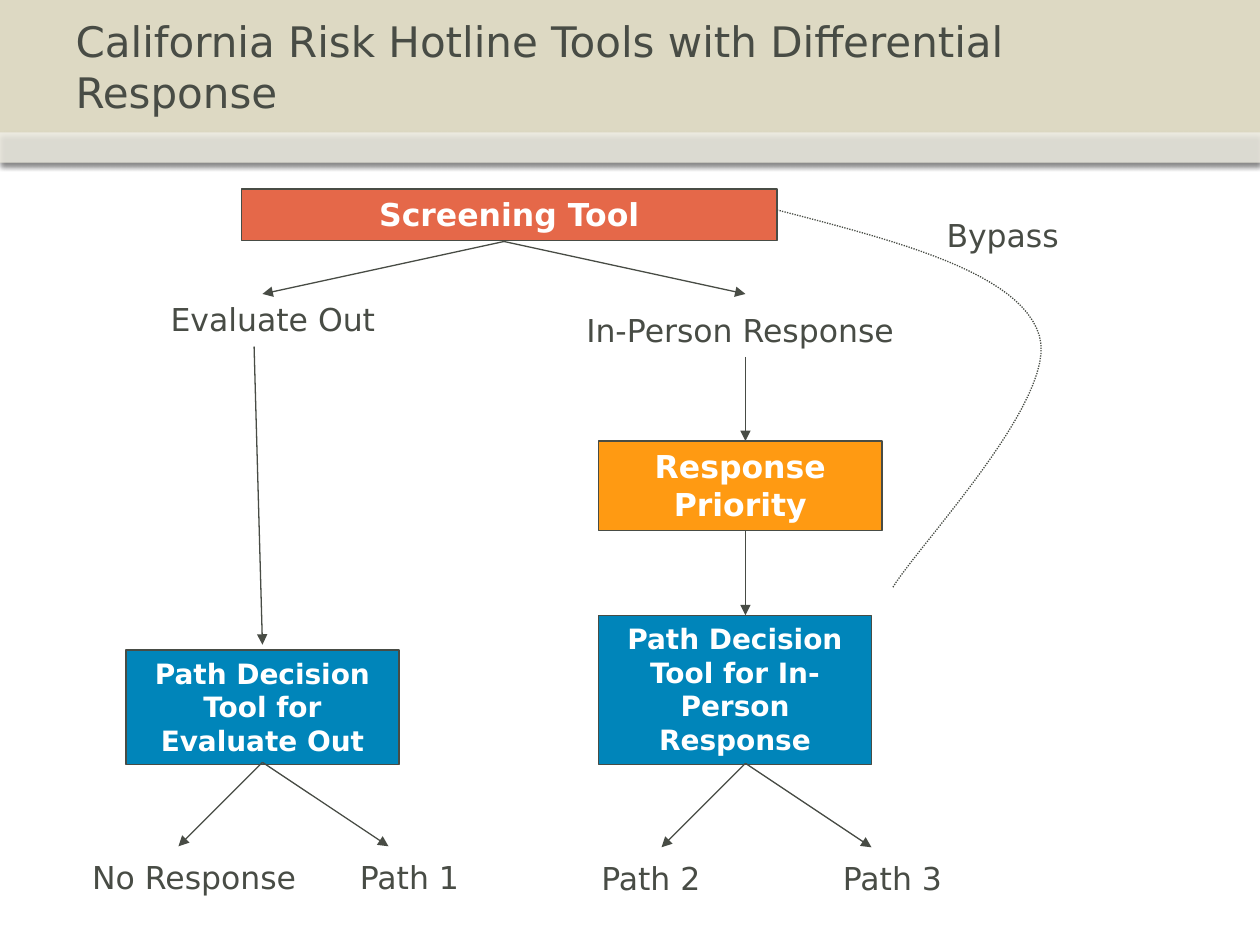
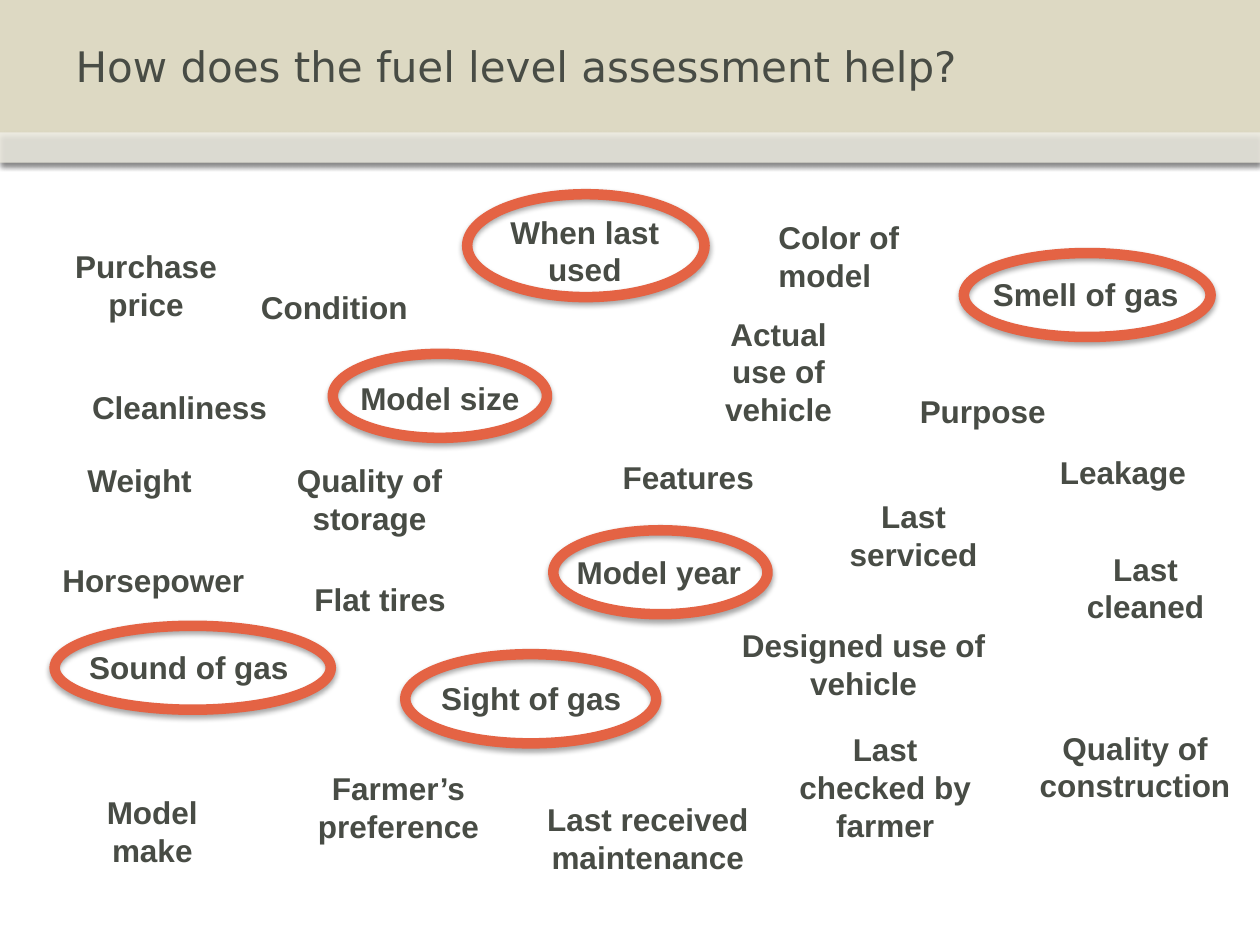
from typing import NamedTuple

from lxml import etree
from pptx import Presentation
from pptx import util as u
from pptx.dml.color import RGBColor
from pptx.enum import dml, shapes, text
from pptx.oxml.ns import qn

# The slide is a grid of 120 columns by 90 rows of square cells.
COLS, ROWS = 120, 90
CELL = u.Inches(10) / COLS

INK, WHITE, SAND = "484C45", "FFFFFF", "DDD9C3"
CORAL, ORANGE, BLUE, RING = "E56849", "FF9A12", "0085BA", "E46344"
SANS, ARIAL = "DejaVu Sans", "Arial"
CENTER, LEFT = text.PP_ALIGN.CENTER, text.PP_ALIGN.LEFT
Point = tuple[float, float]


class Area(NamedTuple):
    """Left, top, width and height in grid cells."""
    x: float
    y: float
    w: float
    h: float = 8.3


class Step(NamedTuple):
    label: str
    area: Area
    fill: str | None = None
    size: int = 18


class Factor(NamedTuple):
    label: str
    area: Area
    align: text.PP_ALIGN = CENTER


STEPS = [
    Step("Bypass", Area(87, 20, 17, 4.8)),
    Step("Screening Tool", Area(23, 18, 51, 4.9), CORAL),
    Step("Evaluate Out", Area(11, 28, 30, 4.8)),
    Step("In-Person Response", Area(53, 29, 35, 4.8)),
    Step("Response Priority", Area(57, 42, 27, 8.5), ORANGE),
    Step("Path Decision Tool for In-Person Response", Area(57, 58.6, 26, 14.2), BLUE, 16),
    Step("Path Decision Tool for Evaluate Out", Area(12, 61.9, 26, 10.9), BLUE, 16),
    Step("No Response", Area(7, 81.1, 23, 4.8)),
    Step("Path 1", Area(30, 81.1, 18, 4.8)),
    Step("Path 2", Area(53, 81.2, 18, 4.8)),
    Step("Path 3", Area(76, 81.2, 18, 4.8)),
]
ARROWS: list[tuple[Point, list[Point]]] = [
    ((48, 23), [(25, 28), (71, 28)]),
    ((24.2, 33), [(25, 61.4)]),
    ((71, 34), [(71, 42)]),
    ((71, 50.6), [(71, 58.6)]),
    ((25, 72.6), [(17, 80.6), (37, 80.6)]),
    ((71, 72.7), [(63, 80.7), (83, 80.7)]),
]
BYPASS_CURVES: list[list[Point]] = [
    [(74, 20), (85.6, 23), (97.2, 26), (99, 32)],
    [(99, 32), (100.8, 38), (87.4, 52), (85, 56)],
]
FACTORS = [
    Factor("Condition", Area(24, 25.1, 17.6), LEFT),
    Factor("Features", Area(56.3, 41.3, 18.5)),
    Factor("Quality of storage", Area(23, 43.4, 24.4)),
    Factor("Horsepower", Area(4, 51.1, 21.2)),
    Factor("Designed use of vehicle", Area(69.4, 59.9, 25.7, 6.6)),
    Factor("When last used", Area(46, 17.8, 19.4, 12.1)),
    Factor("Model size", Area(25.6, 33.7, 32.6)),
    Factor("Model year", Area(46.3, 50.3, 32.9)),
    Factor("Sound of gas", Area(0, 59.4, 36)),
    Factor("Smell of gas", Area(86.8, 23.8, 33.2)),
    Factor("Sight of gas", Area(32.8, 62.3, 35.6)),
    Factor("Color of model", Area(73.3, 20.2, 21.7), LEFT),
    Factor("Last serviced", Area(77.2, 46.8, 19.6)),
    Factor("Leakage", Area(99.2, 40.8, 15.5)),
    Factor("Farmer’s preference", Area(27.7, 67.8, 20.5, 18.1)),
    Factor("Model make", Area(5.9, 75, 17.2)),
    Factor("Weight", Area(4.7, 41.6, 17.2)),
    Factor("Cleanliness", Area(6.5, 34.6, 21.2)),
    Factor("Last received maintenance", Area(47.4, 71.3, 28.6, 17)),
    Factor("Last checked by farmer", Area(74.8, 66.2, 19, 17.5)),
    Factor("Last cleaned", Area(99.6, 51.8, 19)),
    Factor("Purpose", Area(85.7, 35, 15.8)),
    Factor("Flat tires", Area(27.7, 52.9, 17)),
    Factor("Quality of construction", Area(95.9, 64.6, 24.4, 16.8)),
    Factor("Purchase price", Area(5.3, 23, 17.2)),
    Factor("Actual use of vehicle", Area(66.1, 33, 16.1, 4.7)),
]
KEY_FACTOR_RINGS = [
    Area(44.5, 18.5, 22.6, 9.8),
    Area(31.7, 33.7, 20.4, 8),
    Area(52.7, 50.5, 20.4, 8),
    Area(38.6, 62.3, 23.9, 8.5),
    Area(91.8, 24.1, 23.5, 8),
    Area(5.2, 59.6, 26.3, 8),
]


def rgb(color: str) -> RGBColor:
    return RGBColor.from_string(color)


def cells(*lengths: float) -> list[u.Emu]:
    return [u.Emu(round(n * CELL)) for n in lengths]


def add_run(p, words: str, size: int, font: str = SANS, color: str = INK,
            bold: bool = False) -> None:
    r = p.add_run()
    r.text = words
    r.font.size, r.font.name, r.font.bold = u.Pt(size), font, bold
    r.font.color.rgb = rgb(color)


def add_shadow(sp) -> None:
    """Give the shape a soft shadow falling straight down."""
    effects = sp.element.spPr.find(qn("a:effectLst"))
    shadow = etree.SubElement(effects, qn("a:outerShdw"), blurRad=str(u.Pt(3.1)),
                              dist=str(u.Pt(1.8)), dir="5400000", rotWithShape="0")
    black = etree.SubElement(shadow, qn("a:srgbClr"), val="000000")
    etree.SubElement(black, qn("a:alpha"), val="35000")


def add_plain(s, kind, area: Area, fill: str | None = None,
              line: str | None = None, width: float = 0.75):
    sp = s.shapes.add_shape(kind, *cells(*area))
    if fill:
        sp.fill.solid()
        sp.fill.fore_color.rgb = rgb(fill)
    else:
        sp.fill.background()
    if line:
        sp.line.color.rgb, sp.line.width = rgb(line), u.Pt(width)
    else:
        sp.line.fill.background()
    sp.shadow.inherit = False
    return sp


def add_bands(s, layout) -> None:
    """Put the header bands behind everything on the layout."""
    header = add_plain(s, shapes.MSO_SHAPE.RECTANGLE, Area(0, 0, COLS, 15.5), SAND)
    strip = add_plain(s, shapes.MSO_SHAPE.RECTANGLE, Area(0, 12.6, COLS, 2.9), WHITE)
    white = strip.element.spPr.find(".//" + qn("a:srgbClr"))
    etree.SubElement(white, qn("a:alpha"), val="53000")
    for i, band in enumerate((header, strip)):
        add_shadow(band)
        band.element.nvSpPr.cNvPr.set("id", str(101 + i))
        layout.shapes.element.insert(2 + i, band.element)


def add_title(s, words: str) -> None:
    title = s.shapes.title
    title.left, title.top, title.width, title.height = cells(6, 0, 108, 12.6)
    tf = title.text_frame
    tf.auto_size = text.MSO_AUTO_SIZE.NONE
    tf.vertical_anchor = text.MSO_ANCHOR.MIDDLE
    p = tf.paragraphs[0]
    p.alignment = LEFT
    add_run(p, words, 24)


def add_step(s, step: Step) -> None:
    if step.fill:
        sp = add_plain(s, shapes.MSO_SHAPE.RECTANGLE, step.area, step.fill, INK)
    else:
        sp = s.shapes.add_textbox(*cells(*step.area))
    tf = sp.text_frame
    tf.word_wrap = True
    tf.auto_size = text.MSO_AUTO_SIZE.SHAPE_TO_FIT_TEXT
    tf.vertical_anchor = text.MSO_ANCHOR.TOP
    p = tf.paragraphs[0]
    p.alignment = CENTER
    add_run(p, step.label, step.size, color=WHITE if step.fill else INK, bold=bool(step.fill))


def add_arrow(s, start: Point, end: Point) -> None:
    arrow = s.shapes.add_connector(shapes.MSO_CONNECTOR.STRAIGHT, *cells(*start, *end))
    arrow.line.color.rgb, arrow.line.width = rgb(INK), u.Pt(0.75)
    spPr = arrow.element.spPr
    etree.SubElement(spPr.get_or_add_ln(), qn("a:tailEnd"), type="triangle")
    etree.SubElement(spPr, qn("a:effectLst"))


def bezier(curve: list[Point], t: float) -> Point:
    weights = ((1 - t) ** 3, 3 * t * (1 - t) ** 2, 3 * t * t * (1 - t), t ** 3)
    x, y = (sum(w * c for w, c in zip(weights, axis)) for axis in zip(*curve))
    return x, y


def add_dotted_curve(s, curves: list[list[Point]], pieces: int = 24) -> None:
    points = [cells(*bezier(c, i / pieces)) for c in curves for i in range(1, pieces + 1)]
    builder = s.shapes.build_freeform(*cells(*curves[0][0]))
    builder.add_line_segments(points, close=False)
    sp = builder.convert_to_shape()
    sp.fill.background()
    sp.line.color.rgb, sp.line.width = rgb(INK), u.Pt(0.75)
    sp.line.dash_style = dml.MSO_LINE.ROUND_DOT
    sp.shadow.inherit = False


def add_factor(s, factor: Factor) -> None:
    tf = s.shapes.add_textbox(*cells(*factor.area)).text_frame
    tf.word_wrap = True
    tf.vertical_anchor = text.MSO_ANCHOR.MIDDLE
    tf.margin_left = tf.margin_right = u.Inches(0.07)
    tf.margin_top = tf.margin_bottom = u.Inches(0.04)
    p = tf.paragraphs[0]
    p.alignment = factor.align
    add_run(p, factor.label, 18, ARIAL, bold=True)


def add_hotline_slide(s) -> None:
    add_title(s, "California Risk Hotline Tools with Differential Response")
    for step in STEPS:
        add_step(s, step)
    for start, ends in ARROWS:
        for end in ends:
            add_arrow(s, start, end)
    add_dotted_curve(s, BYPASS_CURVES)


def add_fuel_slide(s) -> None:
    add_title(s, "How does the fuel level assessment help?")
    for factor in FACTORS:
        add_factor(s, factor)
    for area in KEY_FACTOR_RINGS:
        add_shadow(add_plain(s, shapes.MSO_SHAPE.OVAL, area, line=RING, width=6))


def main() -> None:
    prs = Presentation()
    prs.slide_width, prs.slide_height = cells(COLS, ROWS)
    layout = prs.slide_layouts.get_by_name("Title Only")
    hotline, fuel = (prs.slides.add_slide(layout) for _ in range(2))
    add_bands(hotline, layout)
    add_hotline_slide(hotline)
    add_fuel_slide(fuel)
    prs.save("out.pptx")


if __name__ == "__main__":
    main()
